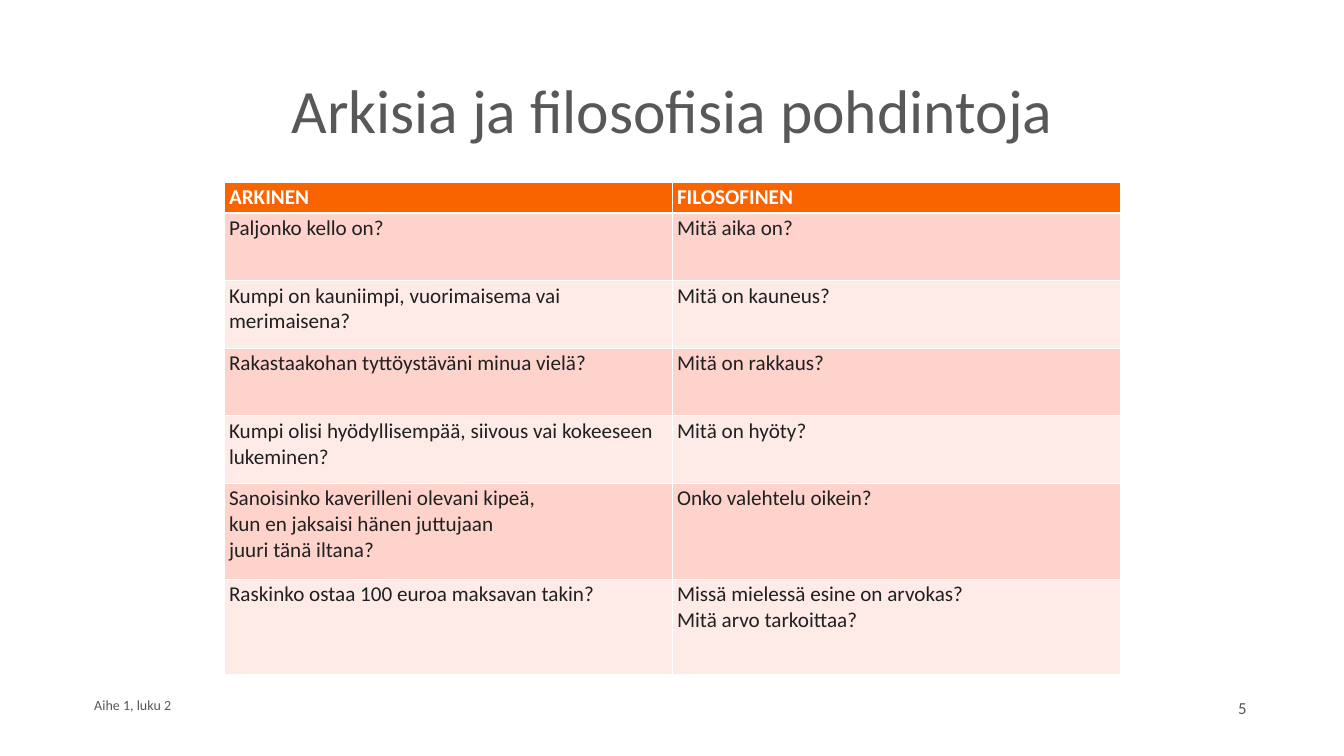
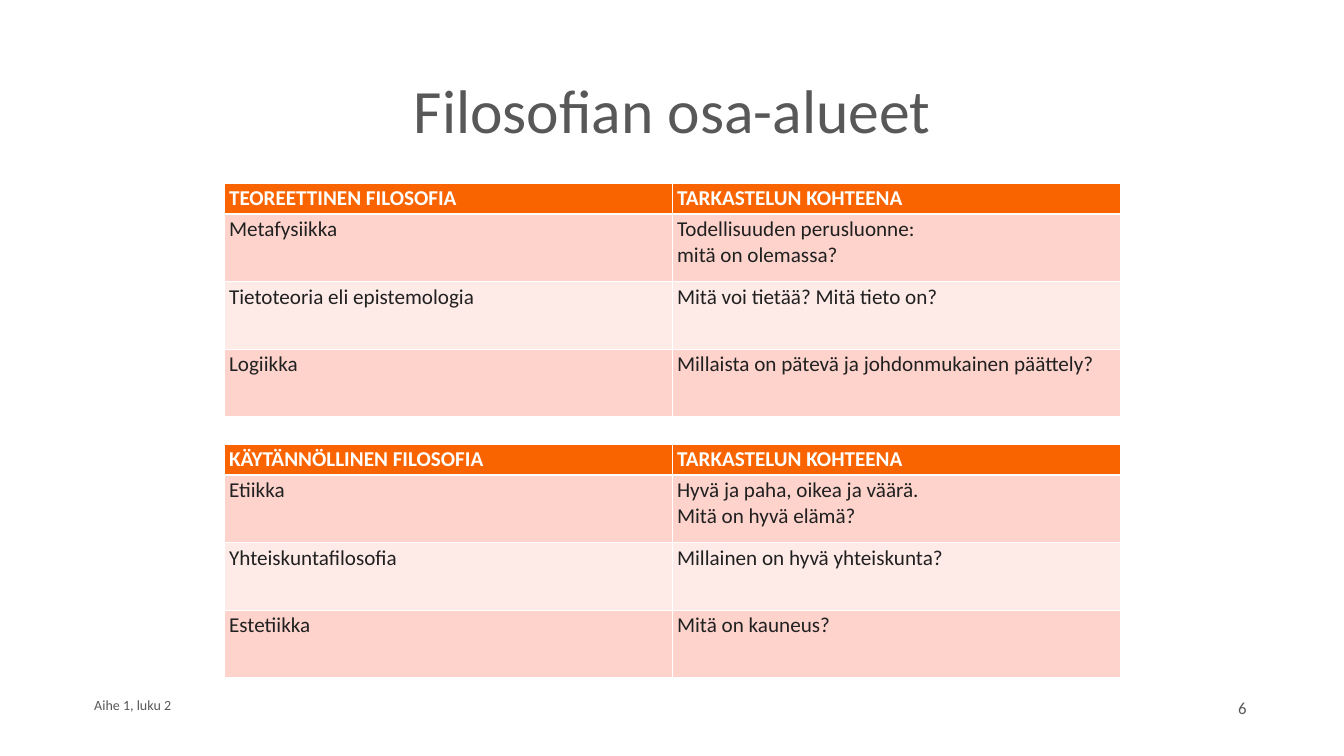
"""Build two slides that compare everyday and philosophical questions in tables."""
from dataclasses import dataclass

import lxml.etree
import pptx
import pptx.dml.color
import pptx.enum.text
import pptx.oxml.ns
import pptx.util

Pt = pptx.util.Pt
ANCHOR = pptx.enum.text.MSO_ANCHOR
ALIGN = pptx.enum.text.PP_ALIGN


@dataclass(frozen=True)
class Theme:
    font: str = "Calibri"
    grey: str = "585858"
    ink: str = "202020"
    white: str = "FFFFFF"
    orange: str = "FA6400"
    bands: tuple = ("FDD3CC", "FEEAE7")
    title_size: float = 88
    table_size: float = 30.2
    number_size: float = 24
    footer_size: float = 20
    grid_line: float = 1
    header_line: float = 3


def rgb(value):
    return pptx.dml.color.RGBColor.from_string(value)


def write(frame, text, *, font, size, color, bold=False, align=ALIGN.LEFT,
          anchor=ANCHOR.TOP, spacing=None):
    frame.word_wrap = True
    frame.vertical_anchor = anchor
    for index, line in enumerate(text.split("\n")):
        paragraph = frame.add_paragraph() if index else frame.paragraphs[0]
        paragraph.alignment = align
        if spacing:
            paragraph.line_spacing = spacing
        run = paragraph.add_run()
        run.text = line
        run.font.name = font
        run.font.size = Pt(size)
        run.font.bold = bold
        run.font.color.rgb = rgb(color)


class Deck:
    def __init__(self, theme):
        self.theme = theme
        self.presentation = pptx.Presentation()
        self.presentation.slide_width = Pt(1920)
        self.presentation.slide_height = Pt(1080)
        self.slide = None

    def start_slide(self, title, number):
        theme = self.theme
        self.slide = self.presentation.slides.add_slide(self.presentation.slide_layouts[6])
        self.text(title, 132, 57.6, 1656, 208.8, size=theme.title_size,
                  align=ALIGN.CENTER, anchor=ANCHOR.MIDDLE, spacing=0.9)
        self.text(str(number), 1356, 971.5, 432, 57.6, size=theme.number_size,
                  align=ALIGN.RIGHT, anchor=ANCHOR.BOTTOM)
        self.text("Aihe 1, luku 2", 127.5, 982, 648, 40.3, size=theme.footer_size,
                  anchor=ANCHOR.BOTTOM)

    def text(self, text, left, top, width, height, **style):
        box = self.slide.shapes.add_textbox(Pt(left), Pt(top), Pt(width), Pt(height))
        write(box.text_frame, text, font=self.theme.font, color=self.theme.grey, **style)

    def border(self, cell, row):
        theme = self.theme
        qn = pptx.oxml.ns.qn
        properties = cell._tc.get_or_add_tcPr()
        heavy = {"T": row == 1, "B": row == 0}
        for side in "LRTB":
            width = theme.header_line if heavy.get(side) else theme.grid_line
            line = lxml.etree.SubElement(properties, qn(f"a:ln{side}"), w=str(Pt(width)))
            fill = lxml.etree.SubElement(line, qn("a:solidFill"))
            lxml.etree.SubElement(fill, qn("a:srgbClr"), val=theme.white)

    def table(self, top, rows, heights, left=320, width=1280):
        theme = self.theme
        columns = len(rows[0])
        heights = [44, *heights]
        grid = self.slide.shapes.add_table(len(rows), columns, Pt(left), Pt(top),
                                           Pt(width), Pt(sum(heights))).table
        for column in grid.columns:
            column.width = Pt(width / columns)
        for row, (texts, height) in enumerate(zip(rows, heights)):
            header = row == 0
            grid.rows[row].height = Pt(height)
            for column, text in enumerate(texts):
                cell = grid.cell(row, column)
                self.border(cell, row)
                cell.fill.solid()
                cell.fill.fore_color.rgb = rgb(theme.orange if header else theme.bands[(row - 1) % 2])
                write(cell.text_frame, text, font=theme.font, size=theme.table_size,
                      color=theme.white if header else theme.ink, bold=header)


EVERYDAY_AND_PHILOSOPHICAL = [
    ("ARKINEN", "FILOSOFINEN"),
    ("Paljonko kello on?", "Mitä aika on?"),
    ("Kumpi on kauniimpi, vuorimaisema vai merimaisena?", "Mitä on kauneus?"),
    ("Rakastaakohan tyttöystäväni minua vielä?", "Mitä on rakkaus?"),
    ("Kumpi olisi hyödyllisempää, siivous vai kokeeseen lukeminen?", "Mitä on hyöty?"),
    ("Sanoisinko kaverilleni olevani kipeä,\nkun en jaksaisi hänen juttujaan\njuuri tänä iltana?",
     "Onko valehtelu oikein?"),
    ("Raskinko ostaa 100 euroa maksavan takin?",
     "Missä mielessä esine on arvokas?\nMitä arvo tarkoittaa?"),
]
THEORETICAL = [
    ("TEOREETTINEN FILOSOFIA", "TARKASTELUN KOHTEENA"),
    ("Metafysiikka", "Todellisuuden perusluonne:\nmitä on olemassa?"),
    ("Tietoteoria eli epistemologia", "Mitä voi tietää? Mitä tieto on?"),
    ("Logiikka", "Millaista on pätevä ja johdonmukainen päättely?"),
]
PRACTICAL = [
    ("KÄYTÄNNÖLLINEN FILOSOFIA", "TARKASTELUN KOHTEENA"),
    ("Etiikka", "Hyvä ja paha, oikea ja väärä.\nMitä on hyvä elämä?"),
    ("Yhteiskuntafilosofia", "Millainen on hyvä yhteiskunta?"),
    ("Estetiikka", "Mitä on kauneus?"),
]
SHORT_ROW, TALL_ROW = 96.6, 136.8


def main():
    deck = Deck(Theme())
    deck.start_slide("Arkisia ja filosofisia pohdintoja", 5)
    deck.table(260, EVERYDAY_AND_PHILOSOPHICAL, [SHORT_ROW] * 4 + [TALL_ROW] * 2)
    deck.start_slide("Filosofian osa-alueet", 6)
    deck.table(261.4, THEORETICAL, [SHORT_ROW] * 3)
    deck.table(634.4, PRACTICAL, [SHORT_ROW] * 3)
    deck.presentation.save("out.pptx")


if __name__ == "__main__":
    main()
